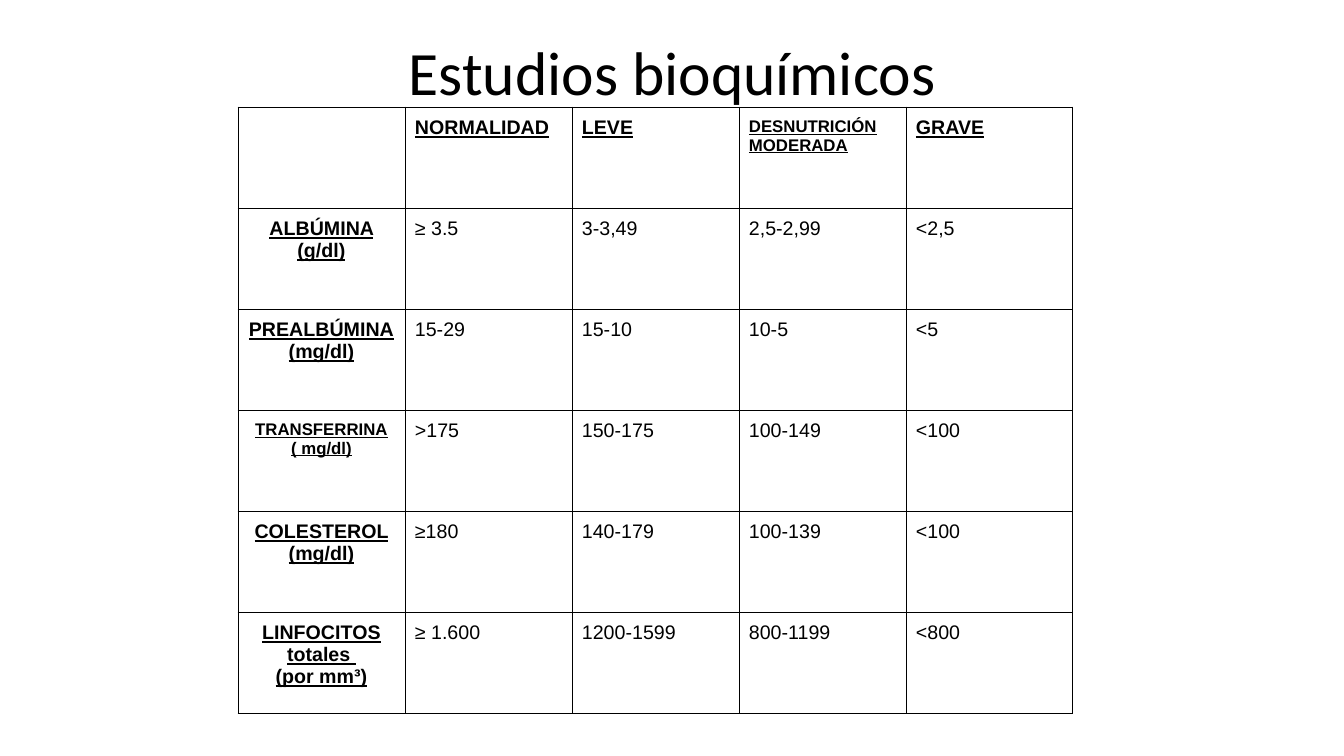
from lxml import etree
from pptx import Presentation
from pptx.dml.color import RGBColor
from pptx.enum.text import MSO_ANCHOR, PP_ALIGN
from pptx.oxml.ns import qn
from pptx.util import Emu, Pt

EMU_PER_PX = 914400 / 100.8
LEFT, CENTER = PP_ALIGN.LEFT, PP_ALIGN.CENTER
TOP, MIDDLE = MSO_ANCHOR.TOP, MSO_ANCHOR.MIDDLE
TITLE_ONLY = 5
COLORS = {"text": "000000", "border": "000000"}

COL_WIDTH, ROW_HEIGHT, CELL_MARGIN = 167, 101, 10
BORDER_PT = 0.75
ROWS = [
    ["", "NORMALIDAD", "LEVE", "DESNUTRICIÓN\nMODERADA", "GRAVE"],
    ["ALBÚMINA (g/dl)", "≥ 3.5", "3-3,49", "2,5-2,99", "<2,5"],
    ["PREALBÚMINA\n(mg/dl)", "15-29", "15-10", "10-5", "<5"],
    ["TRANSFERRINA\n( mg/dl)", ">175", "150-175", "100-149", "<100"],
    ["COLESTEROL (mg/dl)", "≥180", "140-179", "100-139", "<100"],
    ["LINFOCITOS totales \n(por mm³)", "≥ 1.600", "1200-1599", "800-1199", "<800"],
]
SMALL_HEADINGS = {(0, 3), (3, 0)}


def px(n):
    return Emu(round(n * EMU_PER_PX))


def write_text(tf, text, size, font="Arial", heading=False, align=LEFT):
    """Write one paragraph per line of text."""
    for i, line in enumerate(text.split("\n")):
        p = tf.paragraphs[0] if i == 0 else tf.add_paragraph()
        p.alignment = align
        r = p.add_run()
        r.text = line
        r.font.name = font
        r.font.size = Pt(size)
        r.font.bold = heading
        r.font.underline = heading
        r.font.color.rgb = RGBColor.from_string(COLORS["text"])


def add_borders(cell):
    tcPr = cell._tc.get_or_add_tcPr()
    for side in ("a:lnL", "a:lnR", "a:lnT", "a:lnB"):
        ln = etree.SubElement(tcPr, qn(side), w=str(Pt(BORDER_PT)))
        fill = etree.SubElement(ln, qn("a:solidFill"))
        etree.SubElement(fill, qn("a:srgbClr"), val=COLORS["border"])


def add_title(s, text, x, y, w, h):
    sp = s.shapes.title
    sp.left, sp.top, sp.width, sp.height = px(x), px(y), px(w), px(h)
    tf = sp.text_frame
    tf.word_wrap = True
    tf.vertical_anchor = MIDDLE
    write_text(tf, text, 44, font="Calibri", align=CENTER)


def format_cell(cell):
    cell.margin_left = cell.margin_right = px(CELL_MARGIN)
    cell.margin_top = cell.margin_bottom = px(CELL_MARGIN)
    cell.vertical_anchor = TOP
    add_borders(cell)
    cell.fill.background()


def add_grid(s, rows, x, y):
    n_rows, n_cols = len(rows), len(rows[0])
    table = s.shapes.add_table(n_rows, n_cols, px(x), px(y),
                               px(n_cols * COL_WIDTH), px(n_rows * ROW_HEIGHT)).table
    table.first_row = table.horz_banding = False
    for column in table.columns:
        column.width = px(COL_WIDTH)
    for i, values in enumerate(rows):
        table.rows[i].height = px(ROW_HEIGHT)
        for j, value in enumerate(values):
            cell = table.cell(i, j)
            format_cell(cell)
            if value:
                write_text(cell.text_frame, value,
                           12 if (i, j) in SMALL_HEADINGS else 14,
                           heading=i == 0 or j == 0,
                           align=CENTER if j == 0 else LEFT)


def main():
    prs = Presentation()
    prs.slide_width, prs.slide_height = px(1344), px(756)
    s = prs.slides.add_slide(prs.slide_layouts[TITLE_ONLY])
    add_title(s, "Estudios bioquímicos", 219, 19, 907, 104)
    add_grid(s, ROWS, 238, 107)
    prs.save("out.pptx")


if __name__ == "__main__":
    main()
